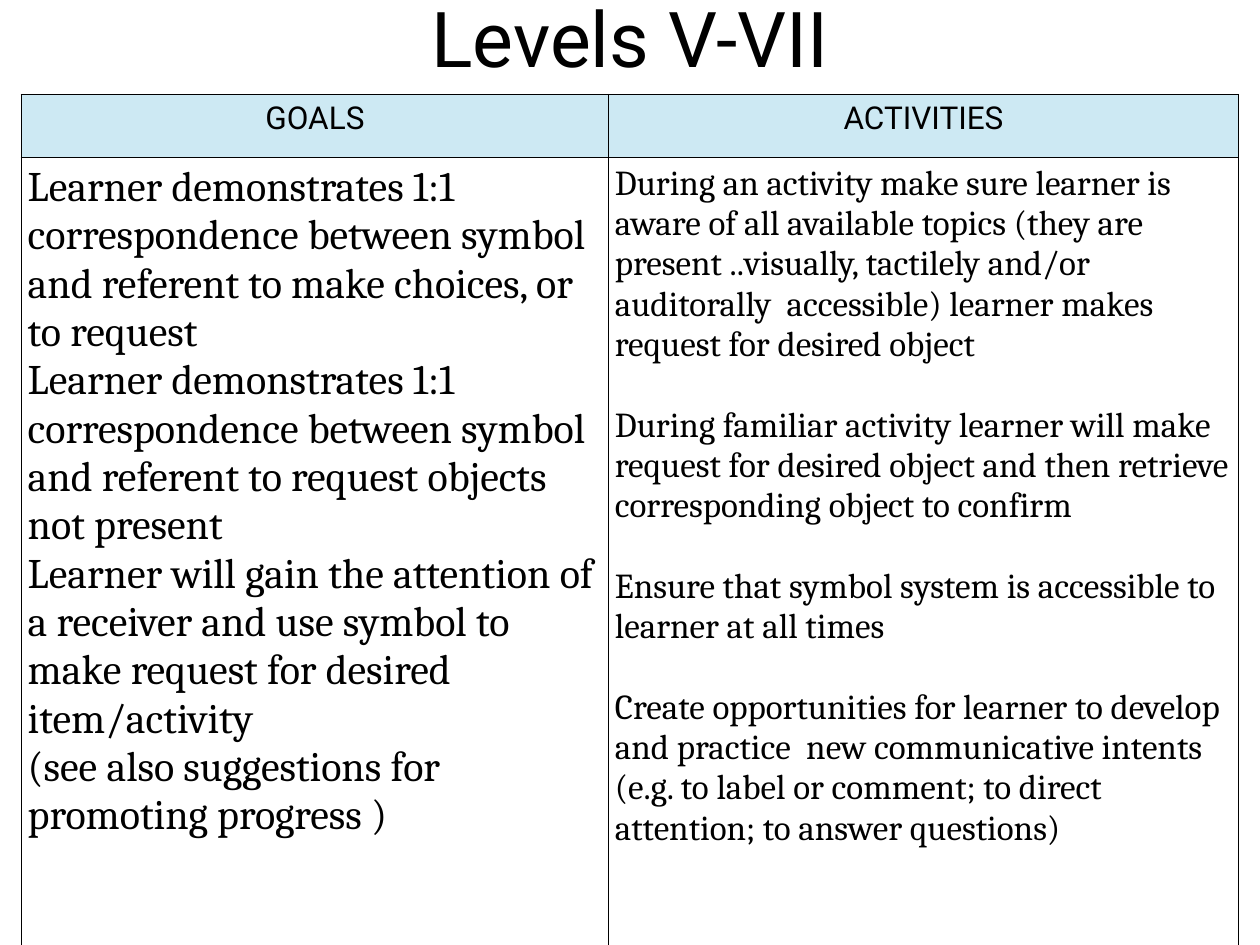
"""Build the Levels V-VII slide with its table of goals and activities."""
from dataclasses import dataclass

from lxml.etree import SubElement
from pptx import Presentation
from pptx.dml.color import RGBColor
from pptx.enum.text import MSO_ANCHOR, PP_ALIGN
from pptx.oxml.ns import qn
from pptx.util import Inches, Pt

BLACK = RGBColor(0x00, 0x00, 0x00)
WHITE = RGBColor(0xFF, 0xFF, 0xFF)
PALE_BLUE = RGBColor(0xCD, 0xE9, 0xF3)
HEADING_FONT = "Roboto"
BODY_FONT = "Cambria"
CELL_INSET = Inches(0.05)
ROW_HEIGHTS = (0.5, 6.9)


@dataclass(frozen=True)
class TextStyle:
    font: str
    size: float
    align: PP_ALIGN = PP_ALIGN.LEFT
    gap: float = 0


@dataclass(frozen=True)
class Column:
    heading: str
    width: float
    entries: tuple[str, ...]
    style: TextStyle


TITLE_STYLE = TextStyle(HEADING_FONT, 44, PP_ALIGN.CENTER)
HEADING_STYLE = TextStyle(HEADING_FONT, 18, PP_ALIGN.CENTER)

COLUMNS = (
    Column("GOALS", 4.66, (
        "Learner demonstrates 1:1 correspondence between symbol and referent "
        "to make choices, or to request",
        "Learner demonstrates 1:1 correspondence between symbol and referent "
        "to request objects not present",
        "Learner will gain the attention of a receiver and use symbol to make "
        "request for desired item/activity",
        "(see also suggestions for promoting progress )",
    ), TextStyle(BODY_FONT, 24)),
    Column("ACTIVITIES", 5, (
        "During an activity make sure learner is aware of all available topics "
        "(they are present ..visually, tactilely and/or auditorally  accessible) "
        "learner makes request for desired object",
        "During familiar activity learner will make request for desired object "
        "and then retrieve corresponding object to confirm",
        "Ensure that symbol system is accessible to learner at all times",
        "Create opportunities for learner to develop and practice  new "
        "communicative intents (e.g. to label or comment; to direct attention; "
        "to answer questions)",
    ), TextStyle(BODY_FONT, 20, gap=23)),
)


def write_text(text_frame, entries: tuple[str, ...], style: TextStyle) -> None:
    text_frame.text = "\n".join(entries)
    text_frame.word_wrap = True
    for index, para in enumerate(text_frame.paragraphs):
        para.alignment = style.align
        para.space_before = Pt(style.gap if index else 0)
        for span in para.runs:
            span.font.name = style.font
            span.font.size = Pt(style.size)
            span.font.bold = False
            span.font.color.rgb = BLACK


def draw_borders(cell) -> None:
    properties = cell._tc.get_or_add_tcPr()
    for side in ("a:lnL", "a:lnR", "a:lnT", "a:lnB"):
        line = SubElement(properties, qn(side), w=str(Pt(1)))
        fill = SubElement(line, qn("a:solidFill"))
        SubElement(fill, qn("a:srgbClr"), val=str(BLACK))


def fill_cell(cell, entries: tuple[str, ...], style: TextStyle, color: RGBColor) -> None:
    draw_borders(cell)
    cell.fill.solid()
    cell.fill.fore_color.rgb = color
    cell.margin_left = cell.margin_right = CELL_INSET
    cell.margin_top = cell.margin_bottom = CELL_INSET
    write_text(cell.text_frame, entries, style)


def add_title(page, text: str) -> None:
    box = page.shapes.add_textbox(Inches(0.5), Inches(-0.25), Inches(9), Inches(1.08))
    frame = box.text_frame
    frame.margin_left = frame.margin_right = 0
    frame.margin_top = frame.margin_bottom = 0
    frame.vertical_anchor = MSO_ANCHOR.MIDDLE
    write_text(frame, (text,), TITLE_STYLE)


def add_level_table(page, columns: tuple[Column, ...]) -> None:
    width = sum(column.width for column in columns)
    table = page.shapes.add_table(
        len(ROW_HEIGHTS), len(columns),
        Inches(0.17), Inches(0.75), Inches(width), Inches(sum(ROW_HEIGHTS)),
    ).table
    for row, height in zip(table.rows, ROW_HEIGHTS):
        row.height = Inches(height)
    for index, column in enumerate(columns):
        table.columns[index].width = Inches(column.width)
        fill_cell(table.cell(0, index), (column.heading,), HEADING_STYLE, PALE_BLUE)
        fill_cell(table.cell(1, index), column.entries, column.style, WHITE)


def main() -> None:
    deck = Presentation()
    deck.slide_width, deck.slide_height = Inches(10), Inches(7.5)
    page = deck.slides.add_slide(deck.slide_layouts[6])
    add_title(page, "Levels V-VII")
    add_level_table(page, COLUMNS)
    deck.save("out.pptx")


if __name__ == "__main__":
    main()
